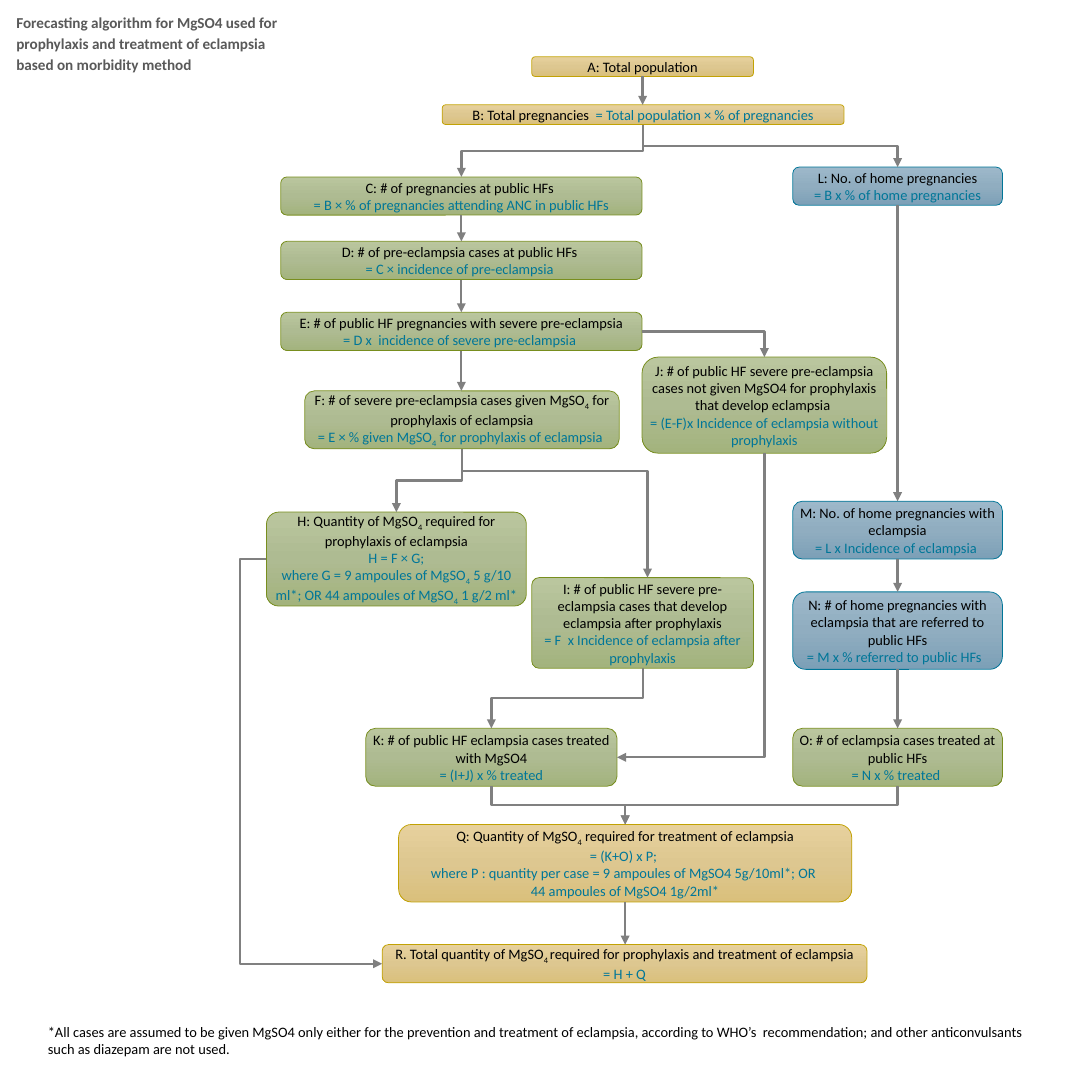
import copy
from dataclasses import dataclass

import pptx
import pptx.dml.color
import pptx.enum.shapes
import pptx.enum.text
import pptx.oxml
import pptx.oxml.ns
import pptx.util
from lxml import etree

Inches = pptx.util.Inches
Pt = pptx.util.Pt
qn = pptx.oxml.ns.qn
RGB = pptx.dml.color.RGBColor.from_string
CONNECTOR = pptx.enum.shapes.MSO_CONNECTOR
ALIGN = pptx.enum.text.PP_ALIGN
ANCHOR = pptx.enum.text.MSO_ANCHOR
GROW = pptx.enum.text.MSO_AUTO_SIZE.SHAPE_TO_FIT_TEXT


@dataclass(frozen=True)
class Theme:
    font: str = "Calibri"
    body_size: float = 9.5
    title_size: float = 10
    ink: str = "000000"
    formula: str = "007698"
    title: str = "595959"
    arrow: str = "808080"
    # Each palette: three gradient stops, then the outline
    total: tuple = ("E7D19D", "DDC790", "DAC07C", "C2A204")
    facility: tuple = ("BAC69E", "AEBB92", "A3B37D", "788E1E")
    home: tuple = ("9DB8CA", "90ADC0", "7CA0B7", "007698")


THEME = Theme()
ROUNDING = 0.167

# letter: (left, top, width, height), palette, heading, formula, corner rounding
STEPS = {
    "A": ((4.87, 0.52, 2.03, 0.18), THEME.total, "A: Total population", "", ROUNDING),
    "B": ((4.05, 0.96, 3.68, 0.18), THEME.total, "B: Total pregnancies ",
          " = Total population × % of pregnancies", ROUNDING),
    "C": ((2.57, 1.62, 3.31, 0.35), THEME.facility, "C: # of pregnancies at public HFs ",
          "\n= B × % of pregnancies attending ANC in public HFs", ROUNDING),
    "D": ((2.57, 2.21, 3.31, 0.35), THEME.facility, "D: # of pre-eclampsia cases at public HFs ",
          "\n= C × incidence of pre-eclampsia ", ROUNDING),
    "E": ((2.57, 2.86, 3.31, 0.35), THEME.facility,
          "E: # of public HF pregnancies with severe pre-eclampsia",
          "\n= D x  incidence of severe pre-eclampsia ", ROUNDING),
    "F": ((2.79, 3.58, 2.88, 0.53), THEME.facility,
          "F: # of severe pre-eclampsia cases given MgSO~4~ for prophylaxis of eclampsia",
          "\n= E × % given MgSO~4~ for prophylaxis of eclampsia ", ROUNDING),
    "H": ((2.44, 4.69, 2.38, 0.86), THEME.facility,
          "H: Quantity of MgSO~4~ required for prophylaxis of eclampsia",
          "\nH = F × G;\nwhere G = 9 ampoules of MgSO~4~ 5 g/10 ml*; OR 44 ampoules of MgSO~4~ 1 g/2 ml*",
          0.13),
    "I": ((4.87, 5.29, 2.03, 0.83), THEME.facility,
          "I: # of public HF severe pre-eclampsia cases that develop eclampsia after prophylaxis",
          "\n= F  x Incidence of eclampsia after prophylaxis", 0.08),
    "J": ((5.88, 3.27, 2.24, 0.88), THEME.facility,
          "J: # of public HF severe pre-eclampsia cases not given MgSO4 for prophylaxis"
          " that develop eclampsia ",
          "\n= (E-F)x Incidence of eclampsia without prophylaxis", ROUNDING),
    "K": ((3.35, 6.67, 2.3, 0.53), THEME.facility,
          "K: # of public HF eclampsia cases treated with MgSO4", "\n= (I+J) x % treated", ROUNDING),
    "L": ((7.26, 1.53, 1.92, 0.35), THEME.home, "L: No. of home pregnancies",
          "\n= B x % of home pregnancies", ROUNDING),
    "M": ((7.26, 4.59, 1.92, 0.53), THEME.home, "M: No. of home pregnancies with eclampsia",
          "\n= L x Incidence of eclampsia ", ROUNDING),
    "N": ((7.26, 5.42, 1.92, 0.71), THEME.home,
          "N: # of home pregnancies with eclampsia that are referred to public HFs",
          "\n= M x % referred to public HFs  ", ROUNDING),
    "O": ((7.26, 6.67, 1.92, 0.53), THEME.facility, "O: # of eclampsia cases treated at public HFs",
          "\n= N x % treated ", ROUNDING),
    "Q": ((3.65, 7.55, 4.15, 0.71), THEME.total,
          "Q: Quantity of MgSO~4~ required for treatment of eclampsia",
          "\n= (K+O) x P; \nwhere P : quantity per case = 9 ampoules of MgSO4 5g/10ml*; OR "
          "\n44 ampoules of MgSO4 1g/2ml*", ROUNDING),
    "R": ((3.5, 8.65, 4.44, 0.35), THEME.total,
          "R. Total quantity of MgSO~4 ~required for prophylaxis and treatment of eclampsia",
          "\n= H + Q", ROUNDING),
}
DOWNWARD = "AB BC BL CD DE EF FH IK KQ OQ QR LM MN NO".split()


def set_all(target, values):
    for name, value in values.items():
        setattr(target, name, value)


def side(letter, edge):
    """Midpoint of one edge of a step."""
    left, top, width, height = STEPS[letter][0]
    return {"top": (left + width / 2, top),
            "bottom": (left + width / 2, top + height),
            "left": (left, top + height / 2),
            "right": (left + width, top + height / 2)}[edge]


class FlowSlide:
    def __init__(self, deck, theme):
        self.theme = theme
        self.slide = deck.slides.add_slide(deck.slide_layouts[5])

    def add_text(self, paragraph, text, color, **font):
        """Add text to a paragraph; parts between tildes are subscripts."""
        for index, part in enumerate(text.split("~")):
            run = paragraph.add_run()
            run.text = part
            set_all(run.font, {"name": self.theme.font, "size": Pt(self.theme.body_size), **font})
            run.font.color.rgb = RGB(color)
            if index % 2:
                run.font._element.set("baseline", "-25000")

    def title(self, text, at):
        title = self.slide.shapes.title
        set_all(title, dict(zip(("left", "top", "width", "height"), map(Inches, at))))
        set_all(title.text_frame, {"word_wrap": True, "auto_size": GROW,
                                   "vertical_anchor": ANCHOR.TOP})
        paragraph = title.text_frame.paragraphs[0]
        set_all(paragraph, {"alignment": ALIGN.LEFT, "line_spacing": 1.15,
                            "space_before": Pt(6), "space_after": Pt(18)})
        self.add_text(paragraph, text, self.theme.title,
                      size=Pt(self.theme.title_size), bold=True)

    def footnote(self, text, at):
        frame = self.slide.shapes.add_textbox(*map(Inches, at)).text_frame
        set_all(frame, {"word_wrap": True, "auto_size": GROW})
        self.add_text(frame.paragraphs[0], text, self.theme.ink)

    def step(self, at, palette, heading, formula, rounding):
        step = self.slide.shapes.add_shape(
            pptx.enum.shapes.MSO_SHAPE.ROUNDED_RECTANGLE, *map(Inches, at))
        step.shadow.inherit = False
        step.adjustments[0] = rounding
        *shades, outline = palette
        step.line.color.rgb = RGB(outline)
        step.line.width = Pt(0.5)
        step.fill.gradient()
        step.fill.gradient_angle = 270
        stops = step._element.spPr.find(".//" + qn("a:gsLst"))
        stops.insert(1, copy.deepcopy(stops[0]))
        for stop, shade, position in zip(step.fill.gradient_stops, shades, (0, 0.5, 1)):
            stop.position = position
            stop.color.rgb = RGB(shade)

        frame = step.text_frame
        set_all(frame, {"word_wrap": True, "auto_size": GROW, "vertical_anchor": ANCHOR.MIDDLE,
                        "margin_left": Inches(0.02), "margin_right": Inches(0.02),
                        "margin_top": 0, "margin_bottom": 0})
        paragraph = frame.paragraphs[0]
        for text, color in ((heading, self.theme.ink), (formula, self.theme.formula)):
            for index, line in enumerate(text.split("\n")):
                if index:
                    paragraph = frame.add_paragraph()
                if line:
                    self.add_text(paragraph, line, color)
        for paragraph in frame.paragraphs:
            paragraph.alignment = ALIGN.CENTER

    def arrow(self, start, end, vertical=True, bend=0.5, preset="bentConnector3"):
        """Arrow leaving vertically or horizontally; straight if the ends line up."""
        (x1, y1), (x2, y2) = start, end
        straight = abs(x2 - x1) < 0.02
        arrow = self.slide.shapes.add_connector(
            CONNECTOR.STRAIGHT if straight else CONNECTOR.ELBOW,
            *map(Inches, (x1, y1, x1 if straight else x2, y2)))
        arrow.line.color.rgb = RGB(self.theme.arrow)
        arrow.line.width = Pt(1.5)
        properties = arrow._element.spPr
        etree.SubElement(properties.find(qn("a:ln")), qn("a:tailEnd"), type="triangle")
        etree.SubElement(properties, qn("a:effectLst"))
        if straight:
            return
        geometry = properties.find(qn("a:prstGeom"))
        geometry.set("prst", preset)
        if preset == "bentConnector3":
            etree.SubElement(geometry.find(qn("a:avLst")), qn("a:gd"),
                             name="adj1", fmla=f"val {round(bend * 100000)}")
        if vertical:
            width, height = abs(y2 - y1), abs(x2 - x1)
            set_all(arrow, {"left": Inches((x1 + x2 - width) / 2),
                            "top": Inches((y1 + y2 - height) / 2),
                            "width": Inches(width), "height": Inches(height)})
            frame = properties.find(qn("a:xfrm"))
            frame.set("rot", str((90 if x2 < x1 else 270) * 60000))
            frame.set("flipH", "0" if x2 < x1 else "1")


def main():
    deck = pptx.Presentation()
    set_all(deck, {"slide_width": Inches(10), "slide_height": Inches(10)})
    flow = FlowSlide(deck, THEME)
    flow.title("Forecasting algorithm for MgSO4 used for prophylaxis and treatment of eclampsia "
               "based on morbidity method", (0.05, 0.05, 2.85, 0.67))
    for step in STEPS.values():
        flow.step(*step)
    for source, target in DOWNWARD:
        flow.arrow(side(source, "bottom"), side(target, "top"))
    flow.arrow(side("F", "bottom"), (5.93, 5.29), bend=0.17)
    flow.arrow(side("E", "right"), side("J", "top"), vertical=False, preset="bentConnector2")
    flow.arrow(side("J", "bottom"), side("K", "right"), preset="bentConnector2")
    flow.arrow(side("H", "left"), side("R", "left"), vertical=False, bend=-0.23)
    flow.footnote("*All cases are assumed to be given MgSO4 only either for the prevention and "
                  "treatment of eclampsia, according to WHO’s  recommendation; and other "
                  "anticonvulsants such as diazepam are not used.", (0.34, 9.32, 9.33, 0.42))
    deck.save("out.pptx")


if __name__ == "__main__":
    main()
